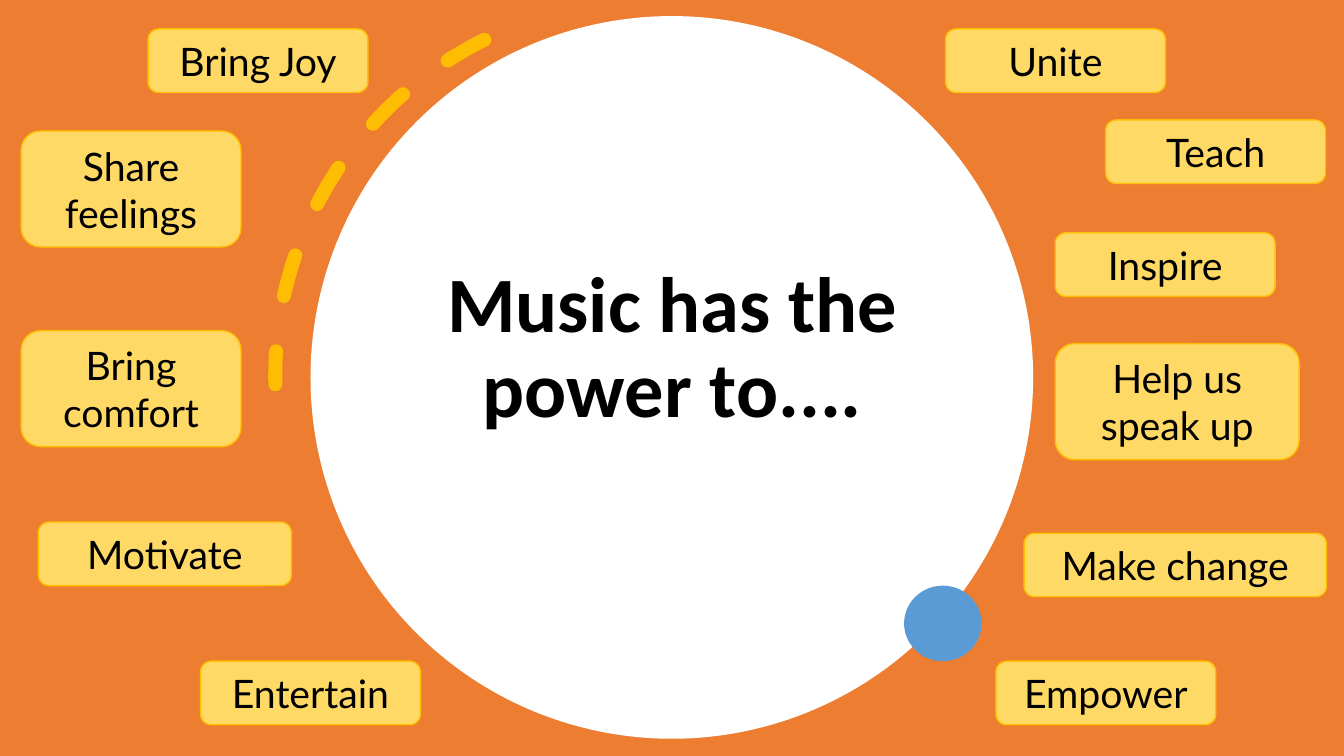
"""Builds a slide on what music has the power to do."""
from dataclasses import dataclass

from lxml.etree import SubElement
from pptx import Presentation
from pptx.dml.color import RGBColor as RGB
from pptx.enum.dml import MSO_LINE as Dash
from pptx.enum.shapes import MSO_SHAPE as Shape
from pptx.enum.text import MSO_ANCHOR as Anchor, MSO_AUTO_SIZE as Fit, PP_ALIGN as Align
from pptx.oxml.ns import qn
from pptx.util import Pt


@dataclass(frozen=True)
class Theme:
    orange: str = "ED7D31"
    white: str = "FFFFFF"
    blue: str = "5B9BD5"
    gold: str = "FFC000"
    pale_gold: str = "FFD966"
    ink: str = "000000"
    title_font: str = "Calibri"
    label_font: str = "Lato"
    title_size: int = 56
    label_size: int = 28


class Deck:
    def __init__(self, theme, width, height):
        self.theme = theme
        self.prs = Presentation()
        self.prs.slide_width, self.prs.slide_height = Pt(width), Pt(height)
        self.slide = self.prs.slides.add_slide(self.prs.slide_layouts[5])

    def shape(self, kind, box, fill=None):
        sp = self.slide.shapes.add_shape(kind, *map(Pt, box))
        sp.shadow.inherit = False
        sp.line.fill.background()
        if fill:
            sp.fill.solid()
            sp.fill.fore_color.rgb = RGB.from_string(fill)
        else:
            sp.fill.background()
        return sp

    def outline(self, sp, width):
        sp.line.color.rgb = RGB.from_string(self.theme.gold)
        sp.line.width = Pt(width)

    def set_text(self, tf, text, font, size, bold=False):
        tf.word_wrap = True
        tf.text = text
        p = tf.paragraphs[0]
        p.alignment = Align.CENTER
        p.font.name, p.font.size, p.font.bold = font, Pt(size), bold
        p.font.color.rgb = RGB.from_string(self.theme.ink)
        return p

    def title(self, text, box, bottom):
        sp = self.slide.shapes.title
        sp.left, sp.top, sp.width, sp.height = map(Pt, box)
        self.slide.shapes._spTree.append(sp._element)
        tf = sp.text_frame
        tf.auto_size = Fit.NONE
        tf.vertical_anchor = Anchor.BOTTOM
        tf.margin_bottom = Pt(bottom)
        p = self.set_text(tf, text, self.theme.title_font, self.theme.title_size, True)
        p.line_spacing = 0.9

    def dashed_arc(self, box, rotation, start, end):
        sp = self.shape(Shape.ARC, box)
        sp.adjustments[0], sp.adjustments[1] = start, end
        sp.rotation = rotation
        sp._element.spPr.find(qn("a:xfrm")).set("flipV", "1")
        self.outline(sp, 10)
        sp.line.dash_style = Dash.DASH
        ln = sp._element.spPr.find(qn("a:ln"))
        ln.set("cap", "rnd")
        color = ln.find(qn("a:solidFill")).find(qn("a:srgbClr"))
        SubElement(color, qn("a:alpha")).set("val", "95000")

    def label(self, text, left, top, width, lines=1):
        height = 45.4 if lines == 1 else 82.8
        sp = self.shape(Shape.ROUNDED_RECTANGLE, (left, top, width, height), self.theme.pale_gold)
        self.outline(sp, 1)
        tf = sp.text_frame
        tf.vertical_anchor = Anchor.MIDDLE
        tf.auto_size = Fit.SHAPE_TO_FIT_TEXT
        self.set_text(tf, text, self.theme.label_font, self.theme.label_size)


WIDTH, HEIGHT = 960, 540
LABEL = 157
LABELS = [
    ("Empower", 711.4, 472.3, LABEL),
    ("Bring Joy", 105.8, 20.7, LABEL),
    ("Share feelings", 15.1, 93.6, LABEL, 2),
    ("Help us speak up", 753.8, 245.5, 174.2, 2),
    ("Unite", 675.4, 20.7, LABEL),
    ("Teach", 789.8, 85.7, LABEL),
    ("Inspire", 753.8, 166.3, LABEL),
    ("Bring comfort", 15.1, 236.2, LABEL, 2),
    ("Make change", 731.5, 380.9, 216),
    ("Entertain", 143.3, 472.3, LABEL),
    ("Motivate", 27.4, 372.9, 180.7),
]


def main():
    theme = Theme()
    deck = Deck(theme, WIDTH, HEIGHT)
    deck.shape(Shape.RECTANGLE, (0, 0, WIDTH, HEIGHT), theme.orange)
    deck.shape(Shape.OVAL, (221.8, 11.5, 516.2, 516.2), theme.white)
    deck.title("Music has the power to....", (261.4, 176.4, 437.8, 198), 64)
    deck.dashed_arc((196.6, 0.7, 536.4, 536.4), 153.7, 162, 200.93)
    deck.shape(Shape.OVAL, (645.8, 418.3, 55.4, 54), theme.blue)
    for item in LABELS:
        deck.label(*item)
    deck.prs.save("out.pptx")


if __name__ == "__main__":
    main()
